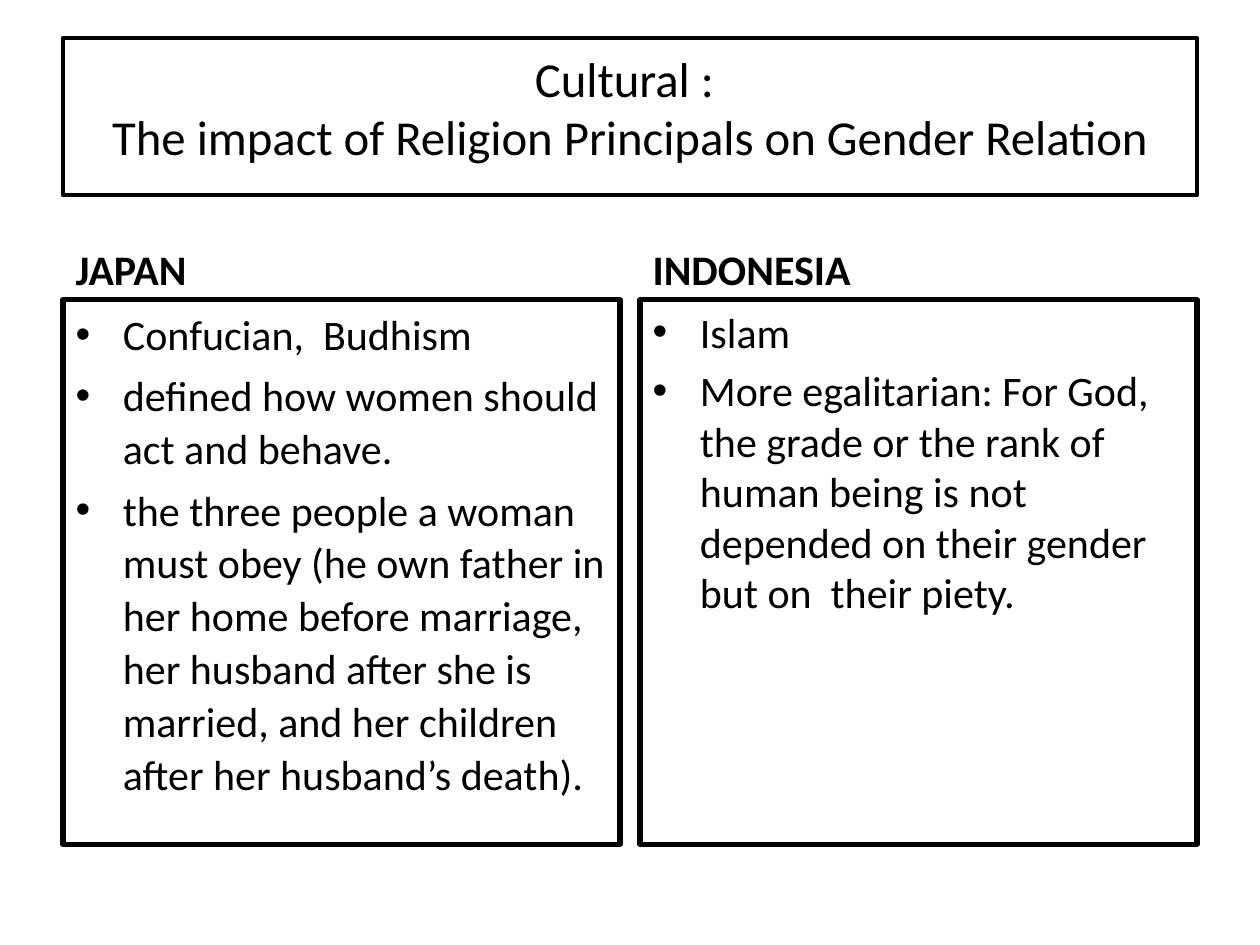
from pptx import Presentation
from pptx.dml.color import RGBColor
from pptx.enum.text import MSO_ANCHOR, MSO_AUTO_SIZE, PP_ALIGN
from pptx.util import Inches, Pt

BLACK = RGBColor(0x00, 0x00, 0x00)
FONT = "Calibri"

MARGIN, GAP = 0.5, 0.16
COL_W = 4.42
HEAD_TOP, HEAD_H = 1.68, 0.7
LIST_H = 4.32

TITLE = "Cultural : \vThe impact of Religion Principals on Gender Relation"

# Heading, list items, line spacing
COLUMNS = [
    ("JAPAN", [
        "Confucian,  Budhism",
        "defined how women should act and behave.",
        "the three people a woman must obey (he own father in her home "
        "before marriage, her husband after she is married, and her "
        "children after her husband’s death).",
    ], 1.05),
    ("INDONESIA", [
        "Islam",
        "More egalitarian: For God, the grade or the rank of human being "
        "is not  depended on their gender but on  their piety.",
    ], None),
]


def place(sp, left, top, width, height):
    box = {"left": left, "top": top, "width": width, "height": height}
    for name, value in box.items():
        setattr(sp, name, Inches(value))


def outline(sp, width):
    sp.line.color.rgb = BLACK
    sp.line.width = Pt(width)


def fill_text(sp, texts, anchor, size, bold=False, **paragraph_format):
    tf = sp.text_frame
    frame_format = {"word_wrap": True, "auto_size": MSO_AUTO_SIZE.NONE,
                    "vertical_anchor": anchor}
    for name, value in frame_format.items():
        setattr(tf, name, value)
    font_format = {"name": FONT, "size": Pt(size), "bold": bold}
    for i, text in enumerate(texts):
        p = tf.add_paragraph() if i else tf.paragraphs[0]
        p.text = text
        for name, value in paragraph_format.items():
            setattr(p, name, value)
        for r in p.runs:
            for name, value in font_format.items():
                setattr(r.font, name, value)
            r.font.color.rgb = BLACK


def add_title(sp):
    place(sp, MARGIN, 0.3, 9, 1.25)
    outline(sp, 2.25)
    fill_text(sp, [TITLE], MSO_ANCHOR.MIDDLE, 27.9, alignment=PP_ALIGN.CENTER)
    sp.text_frame.margin_bottom = Inches(0.2)


def add_column(head, body, left, heading, items, spacing):
    place(head, left, HEAD_TOP, COL_W, HEAD_H)
    fill_text(head, [heading], MSO_ANCHOR.BOTTOM, 24, bold=True)
    place(body, left, HEAD_TOP + HEAD_H, COL_W, LIST_H)
    outline(body, 3)
    fill_text(body, items, MSO_ANCHOR.TOP, 24, line_spacing=spacing)


def main():
    prs = Presentation()
    prs.slide_width, prs.slide_height = Inches(10), Inches(7.5)

    # Comparison layout: title, then a heading and a list per column
    s = prs.slides.add_slide(prs.slide_layouts[4])
    add_title(s.shapes.title)
    for i, column in enumerate(COLUMNS):
        head, body = (s.placeholders[2 * i + n] for n in (1, 2))
        add_column(head, body, MARGIN + i * (COL_W + GAP), *column)

    prs.save("out.pptx")


if __name__ == "__main__":
    main()
